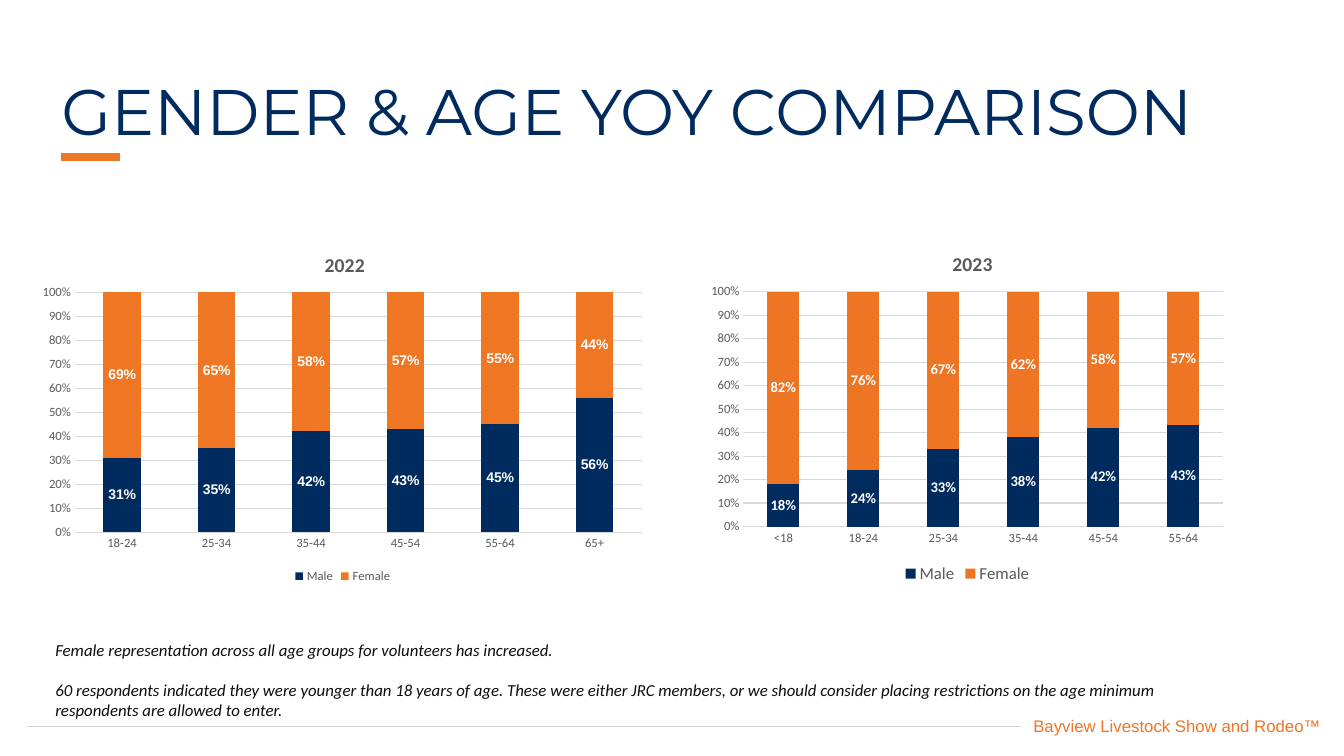
from lxml import etree
from pptx import Presentation
from pptx.chart.data import CategoryChartData
from pptx.dml.color import RGBColor
from pptx.enum.chart import XL_CHART_TYPE, XL_LABEL_POSITION, XL_LEGEND_POSITION, XL_TICK_MARK
from pptx.enum.shapes import MSO_CONNECTOR
from pptx.enum.text import PP_ALIGN
from pptx.oxml.ns import qn
from pptx.util import Inches, Pt

STACKED = XL_CHART_TYPE.COLUMN_STACKED
STACKED_100 = XL_CHART_TYPE.COLUMN_STACKED_100
CENTER = XL_LABEL_POSITION.CENTER
BOTTOM = XL_LEGEND_POSITION.BOTTOM
NO_TICK = XL_TICK_MARK.NONE
STRAIGHT = MSO_CONNECTOR.STRAIGHT
LEFT, RIGHT = PP_ALIGN.LEFT, PP_ALIGN.RIGHT

NAVY, ORANGE, GREY, GRID = "002B5F", "EE7624", "595959", "D9D9D9"


def style(font, size, color, name="Calibri", bold=False, italic=False):
    font.size, font.name, font.bold, font.italic = Pt(size), name, bold, italic
    font.color.rgb = RGBColor.from_string(color)


def place(parent, index, **fractions):
    """Set a manual layout on a chart part, in fractions of the chart size."""
    for old in parent.findall(qn("c:layout")):
        parent.remove(old)
    layout = etree.Element(qn("c:layout"))
    manual = etree.SubElement(layout, qn("c:manualLayout"))
    if "w" in fractions:
        etree.SubElement(manual, qn("c:layoutTarget")).set("val", "inner")
    for mode in ("xMode", "yMode"):
        etree.SubElement(manual, qn("c:" + mode)).set("val", "edge")
    for key, value in fractions.items():
        etree.SubElement(manual, qn("c:" + key)).set("val", str(value))
    parent.insert(index, layout)


prs = Presentation()
prs.slide_width, prs.slide_height = Inches(13.33), Inches(7.5)
slide = prs.slides.add_slide(prs.slide_layouts[6])

# Footer rule and title accent
for x1, x2, y, color, weight in [(0.27, 10.13, 7.21, "D1D3D4", 1),
                                 (0.61, 1.19, 1.56, ORANGE, 6)]:
    rule = slide.shapes.add_connector(STRAIGHT, Inches(x1), Inches(y), Inches(x2), Inches(y))
    rule.line.color.rgb = RGBColor.from_string(color)
    rule.line.width = Pt(weight)
    etree.SubElement(rule.element.spPr, qn("a:effectLst"))

# Footer, title and findings
findings = [
    "Female representation across all age groups for volunteers has increased.",
    "60 respondents indicated they were younger than 18 years of age. These were either "
    "JRC members, or we should consider placing restrictions on the age minimum "
    "respondents are allowed to enter.",
]
texts = [
    ((6.89, 7.05, 6.31, 0.3), ["Bayview Livestock Show and Rodeo™"], RIGHT, 1,
     (12, ORANGE, "Arial")),
    ((0.51, 0.74, 13.23, 0.45), ["GENDER & AGE YOY COMPARISON"], LEFT, 0.9,
     (46, NAVY, "Montserrat")),
    ((0.45, 6.3, 11.47, 0.91), findings, LEFT, 1,
     (12, "0D0D0D", "Calibri", False, True)),
]
for box, paragraphs, align, spacing, font in texts:
    frame = slide.shapes.add_textbox(*map(Inches, box)).text_frame
    frame.word_wrap = True
    for i, words in enumerate(paragraphs):
        paragraph = frame.add_paragraph() if i else frame.paragraphs[0]
        paragraph.alignment, paragraph.line_spacing = align, spacing
        if i:
            paragraph.space_before = Pt(14)
        run = paragraph.add_run()
        run.text = words
        style(run.font, *font)

# One chart per year; the female share is the rest of the male share
years = [
    ("2022", STACKED_100, (0.31, 2.28, 6.18, 3.55),
     ["18-24", "25-34", "35-44", "45-54", "55-64", "65+"],
     [0.31, 0.35, 0.42, 0.43, 0.45, 0.56], (NAVY, "EF7622"), (10, "Arial"), 9,
     {"x": 0.07, "y": 0.175, "w": 0.91, "h": 0.67}),
    ("2023", STACKED, (6.95, 2.27, 5.29, 3.56),
     ["<18", "18-24", "25-34", "35-44", "45-54", "55-64"],
     [0.18, 0.24, 0.33, 0.38, 0.42, 0.43], ("002B5E", "ED7524"), (10.5, "Calibri"), 12,
     {"x": 0.08, "y": 0.175, "w": 0.9, "h": 0.655}),
]
for year, kind, box, ages, male, colors, (label_size, label_font), legend_size, plot_area in years:
    data = CategoryChartData(number_format="0%")
    data.categories = ages
    data.add_series("Male", male)
    data.add_series("Female", [round(1 - share, 2) for share in male])
    chart = slide.shapes.add_chart(kind, *map(Inches, box), data).chart
    style(chart.font, 10, "000000")

    run = chart.chart_title.text_frame.paragraphs[0].add_run()
    run.text = year
    style(run.font, 14, GREY, bold=True)
    chart.chart_title.include_in_layout = False
    place(chart.chart_title.element if hasattr(chart.chart_title, "element")
          else chart.element.find(".//" + qn("c:title")), 1, x=0.465, y=0.05)
    place(chart.element.find(".//" + qn("c:plotArea")), 0, **plot_area)

    chart.has_legend = True
    chart.legend.position = BOTTOM
    chart.legend.include_in_layout = False
    style(chart.legend.font, legend_size, GREY)

    shares = chart.value_axis
    for axis in (chart.category_axis, shares):
        axis.major_tick_mark = axis.minor_tick_mark = NO_TICK
        style(axis.tick_labels.font, 9, GREY)
    shares.format.line.fill.background()
    shares.tick_labels.number_format = "0%"
    shares.tick_labels.number_format_is_linked = False
    shares.minimum_scale, shares.maximum_scale, shares.major_unit = 0, 1, 0.1
    for line in (chart.category_axis.format.line, shares.major_gridlines.format.line):
        line.color.rgb = RGBColor.from_string(GRID)
        line.width = Pt(0.75)

    plot = chart.plots[0]
    plot.gap_width, plot.overlap, plot.vary_by_categories = 150, 100, False
    for gender, color in zip(plot.series, colors):
        gender.format.fill.solid()
        gender.format.fill.fore_color.rgb = RGBColor.from_string(color)
        labels = gender.data_labels
        labels.show_value = True
        labels.position = CENTER
        labels.number_format, labels.number_format_is_linked = "0%", False
        style(labels.font, label_size, "FFFFFF", label_font, bold=True)

prs.save("out.pptx")
